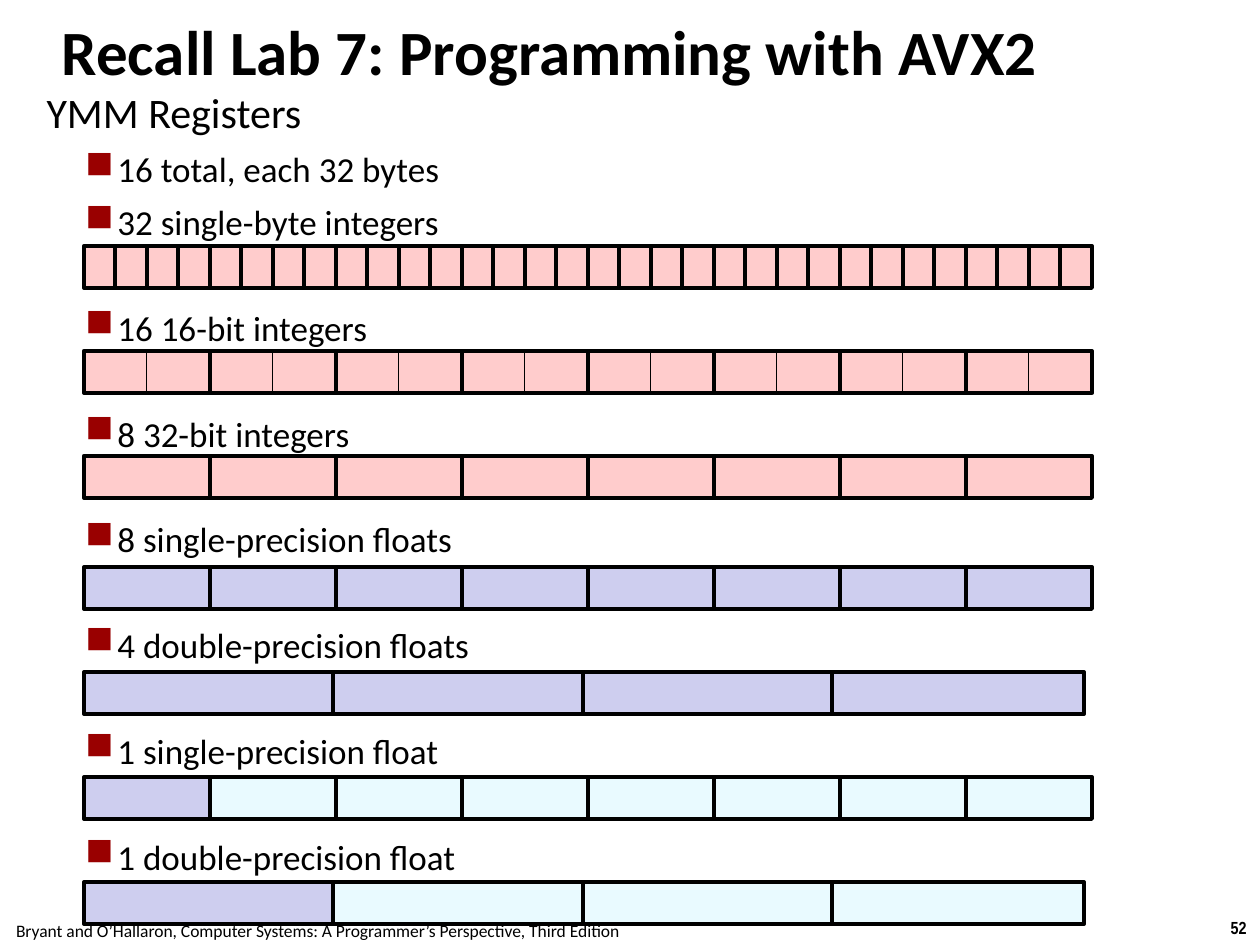
from dataclasses import dataclass
from typing import Optional

from lxml import etree
from pptx import Presentation
from pptx.dml.color import RGBColor
from pptx.enum import shapes, text
from pptx.oxml import ns
from pptx.util import Pt

BLACK, PINK, LILAC, ICE = "000000", "FFCCCC", "CECEEF", "E9FAFF"
LEFT, HIGH, BOLD = 48, 24, 2.25
LINE = 30.2  # pitch of one list line, which each register row takes up


@dataclass
class Row:
    """A register: equal lanes, of which the first `used` hold data."""
    top: float
    count: int
    wide: float
    step: float
    fill: Optional[str]
    used: int
    line: float = BOLD


ROWS = [
    Row(200.5, 16, 36, 36, PINK, 16, 0.5),
    Row(200.5, 8, 72, 72, None, 8),
    Row(140.5, 32, 18, 18, PINK, 32),
    Row(260.5, 8, 72, 72, PINK, 8),
    Row(324, 8, 72, 72, LILAC, 8),
    Row(384, 4, 144, 142.5, LILAC, 4),
    Row(444, 8, 72, 72, LILAC, 1),
    Row(504, 4, 144, 142.5, LILAC, 1),
]

ITEMS = [
    "16 total, each 32 bytes",
    "32 single-byte integers",
    "16 16-bit integers",
    "8 32-bit integers",
    "8 single-precision floats",
    "4 double-precision floats",
    "1 single-precision float",
    "1 double-precision float",
]


def color(code: str) -> RGBColor:
    return RGBColor.from_string(code)


def add_run(para, words: str, size: float, font="Calibri", bold=False):
    run = para.add_run()
    run.text = words
    run.font.size = Pt(size)
    run.font.name = font
    run.font.bold = bold
    run.font.color.rgb = color(BLACK)


def add_box(slide, left, top, wide, high, inset=3.6):
    box = slide.shapes.add_textbox(Pt(left), Pt(top), Pt(wide), Pt(high))
    frame = box.text_frame
    frame.word_wrap = True
    frame.margin_left = frame.margin_right = Pt(inset)
    frame.margin_top = frame.margin_bottom = Pt(3.6)
    return frame


def add_note(slide, left, top, wide, words, font="Calibri", bold=False):
    """Add a small centred line at the foot of the slide."""
    frame = add_box(slide, left, top, wide, 19.4, 7.2)
    frame.word_wrap = False
    frame.auto_size = text.MSO_AUTO_SIZE.SHAPE_TO_FIT_TEXT
    para = frame.paragraphs[0]
    para.alignment = text.PP_ALIGN.CENTER
    add_run(para, words, 10, font, bold)


def set_bullet(para):
    """Hang the paragraph on a dark red square."""
    props = para._p.get_or_add_pPr()
    props.set("marL", str(Pt(40.5)))
    props.set("indent", str(Pt(-18.5)))
    tone = etree.SubElement(props, ns.qn("a:buClr"))
    etree.SubElement(tone, ns.qn("a:srgbClr"), val="990000")
    etree.SubElement(props, ns.qn("a:buSzPct"), val="110000")
    etree.SubElement(props, ns.qn("a:buChar"), char="■")


def add_list(slide):
    frame = add_box(slide, 23, 44.6, 654.5, 483.8)
    head = frame.paragraphs[0]
    head.space_before = Pt(6)
    head.line_spacing = 1.05
    add_run(head, "YMM Registers", 24)
    for i, item in enumerate(ITEMS):
        para = frame.add_paragraph()
        para.level = 1
        para.line_spacing = 1.05
        para.space_before = Pt(5 if i < 2 else 5 + LINE)
        set_bullet(para)
        add_run(para, item, 20)


def add_row(slide, row: Row):
    for i in range(row.count):
        cell = slide.shapes.add_shape(
            shapes.MSO_SHAPE.RECTANGLE, Pt(LEFT + i * row.step), Pt(row.top),
            Pt(row.wide), Pt(HIGH))
        cell.shadow.inherit = False
        cell.line.color.rgb = color(BLACK)
        cell.line.width = Pt(row.line)
        if row.fill is None:
            cell.fill.background()
        else:
            cell.fill.solid()
            cell.fill.fore_color.rgb = color(row.fill if i < row.used else ICE)


def main():
    deck = Presentation()
    deck.slide_width, deck.slide_height = Pt(720), Pt(540)
    slide = deck.slides.add_slide(deck.slide_layouts[6])

    add_note(slide, 695.5, 520.6, 24.5, "52", "Arial Narrow", True)
    add_note(slide, -1.5, 522, 366,
             "Bryant and O’Hallaron, Computer Systems: "
             "A Programmer’s Perspective, Third Edition")

    title = add_box(slide, 31.7, -2, 686, 61)
    title.vertical_anchor = text.MSO_ANCHOR.MIDDLE
    add_run(title.paragraphs[0], "Recall Lab 7: Programming with AVX2", 36, bold=True)

    add_list(slide)
    for row in ROWS:
        add_row(slide, row)
    deck.save("out.pptx")


if __name__ == "__main__":
    main()
